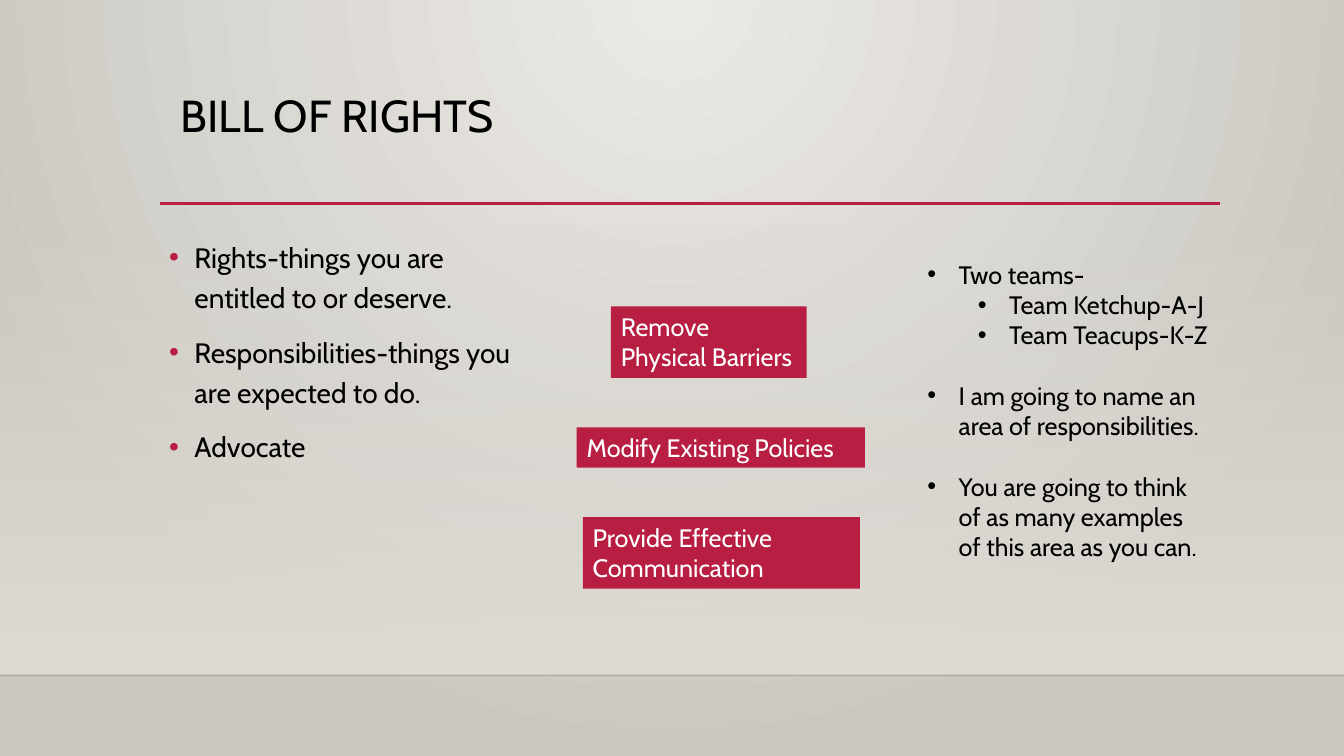
from lxml.etree import SubElement
from pptx import Presentation
from pptx.dml.color import RGBColor
from pptx.enum.shapes import MSO_CONNECTOR, MSO_SHAPE
from pptx.enum.text import MSO_ANCHOR, MSO_AUTO_SIZE, PP_ALIGN
from pptx.oxml.ns import qn
from pptx.util import Inches, Pt

FONT = "Cabin"
COLORS = {
    "text": "000000", "on_accent": "FFFFFF", "accent": "B71E42",
    "glow": "ECEAE7", "edge": "CAC7C1", "wall": "DFDBD5", "floor_line": "000001",
}

TITLE = "BILL OF RIGHTS"
DEFINITIONS = [
    "Rights-things you are entitled to or deserve.",
    "Responsibilities-things you are expected to do.",
    "Advocate",
]
# text, left, top, width, height
ACTIONS = [
    ("Remove Physical Barriers", 6.06, 3.04, 1.94, 0.71),
    ("Modify Existing Policies", 5.72, 4.24, 2.86, 0.4),
    ("Provide Effective Communication", 5.78, 5.13, 2.75, 0.71),
]
# text, level, space before in points
GAME_STEPS = [
    ("Two teams-", 0, 0),
    ("Team Ketchup-A-J", 1, 0),
    ("Team Teacups-K-Z", 1, 0),
    ("I am going to name an area of responsibilities.", 0, 21.7),
    ("You are going to think of as many examples of this area as you can.", 0, 21.7),
]


def add_bullet(paragraph, left, hanging, color=None):
    props = paragraph._p.get_or_add_pPr()
    props.set("marL", str(Inches(left)))
    props.set("indent", str(-Inches(hanging)))
    if color:
        bullet_color = SubElement(props, qn("a:buClr"))
        SubElement(bullet_color, qn("a:srgbClr"), val=COLORS[color])
    SubElement(props, qn("a:buFont"), typeface="Arial")
    SubElement(props, qn("a:buChar"), char="•")


def write(frame, text, size=18, color="text", level=0, before=0, spacing=1.0, bullet=None):
    """Add a paragraph, filling the frame's empty first one if there is one."""
    paragraph = frame.paragraphs[0]
    if paragraph.runs:
        paragraph = frame.add_paragraph()
    paragraph.level = level
    paragraph.alignment = PP_ALIGN.LEFT
    paragraph.line_spacing = spacing
    paragraph.space_before = Pt(before)
    if bullet:
        add_bullet(paragraph, *bullet)
    run = paragraph.add_run()
    run.text = text
    run.font.name = FONT
    run.font.size = Pt(size)
    run.font.color.rgb = RGBColor.from_string(COLORS[color])


def prepare(frame):
    frame.word_wrap = True
    frame.auto_size = MSO_AUTO_SIZE.NONE
    frame.vertical_anchor = MSO_ANCHOR.TOP
    return frame


def add_text_area(slide, *box):
    return prepare(slide.shapes.add_textbox(*map(Inches, box)).text_frame)


def add_block(slide, *box):
    block = slide.shapes.add_shape(MSO_SHAPE.RECTANGLE, *map(Inches, box))
    block.shadow.inherit = False
    block.line.fill.background()
    return block


def set_gradient(fill, element, start, end, start_alpha=None, circle=None):
    """Fade start to end: downwards, or outwards from the circle's l, t, r, b insets."""
    fill.gradient()
    gradient = next(element.iter(qn("a:gradFill")))
    for child in list(gradient):
        gradient.remove(child)
    stops = SubElement(gradient, qn("a:gsLst"))
    for position, name, alpha in ((0, start, start_alpha), (100000, end, None)):
        stop = SubElement(stops, qn("a:gs"), pos=str(position))
        color = SubElement(stop, qn("a:srgbClr"), val=COLORS[name])
        if alpha is not None:
            SubElement(color, qn("a:alpha"), val=str(alpha * 1000))
    if circle:
        shade = SubElement(gradient, qn("a:path"), path="circle")
        insets = {side: str(inset * 1000) for side, inset in zip("ltrb", circle)}
        SubElement(shade, qn("a:fillToRect"), **insets)
    else:
        SubElement(gradient, qn("a:lin"), ang="5400000", scaled="0")


def add_rule(slide, left, right, y, color, width, alpha=None):
    rule = slide.shapes.add_connector(
        MSO_CONNECTOR.STRAIGHT, Inches(left), Inches(y), Inches(right), Inches(y))
    rule.line.color.rgb = RGBColor.from_string(COLORS[color])
    rule.line.width = Pt(width)
    if alpha is not None:
        tint = next(rule.line._ln.iter(qn("a:srgbClr")))
        SubElement(tint, qn("a:alpha"), val=str(alpha * 1000))
    SubElement(rule._element.spPr, qn("a:effectLst"))


def main():
    deck = Presentation()
    deck.slide_width, deck.slide_height = Inches(13.33), Inches(7.5)
    slide = deck.slides.add_slide(deck.slide_layouts[5])

    set_gradient(slide.background.fill, slide._element, "glow", "edge", circle=(43, 0, 43, 100))
    wall = add_block(slide, 0, 2.21, 13.33, 4.49)
    set_gradient(wall.fill, wall._element, "wall", "wall", start_alpha=0)
    add_rule(slide, 0, 13.33, 6.7, "floor_line", 1, alpha=20)
    add_rule(slide, 1.59, 12.1, 2.02, "accent", 2.5)

    title = slide.shapes.title
    title.left, title.top, title.width, title.height = map(Inches, (1.59, 0.88, 10.5, 1.15))
    heading = prepare(title.text_frame)
    heading.margin_left = Inches(0.2)
    write(heading, TITLE, size=32, spacing=0.9)

    definitions = add_text_area(slide, 1.58, 2.27, 3.88, 3.27)
    for index, definition in enumerate(DEFINITIONS):
        write(definitions, definition, size=20, before=10 if index else 0,
              spacing=1.2, bullet=(0.25, 0.25, "accent"))

    for action, *box in ACTIONS:
        block = add_block(slide, *box)
        block.fill.solid()
        block.fill.fore_color.rgb = RGBColor.from_string(COLORS["accent"])
        write(prepare(block.text_frame), action, color="on_accent")

    game = add_text_area(slide, 9.1, 2.52, 2.99, 3.74)
    for step, level, before in GAME_STEPS:
        write(game, step, level=level, before=before, bullet=(0.31 + 0.5 * level, 0.31))

    deck.save("out.pptx")


if __name__ == "__main__":
    main()
